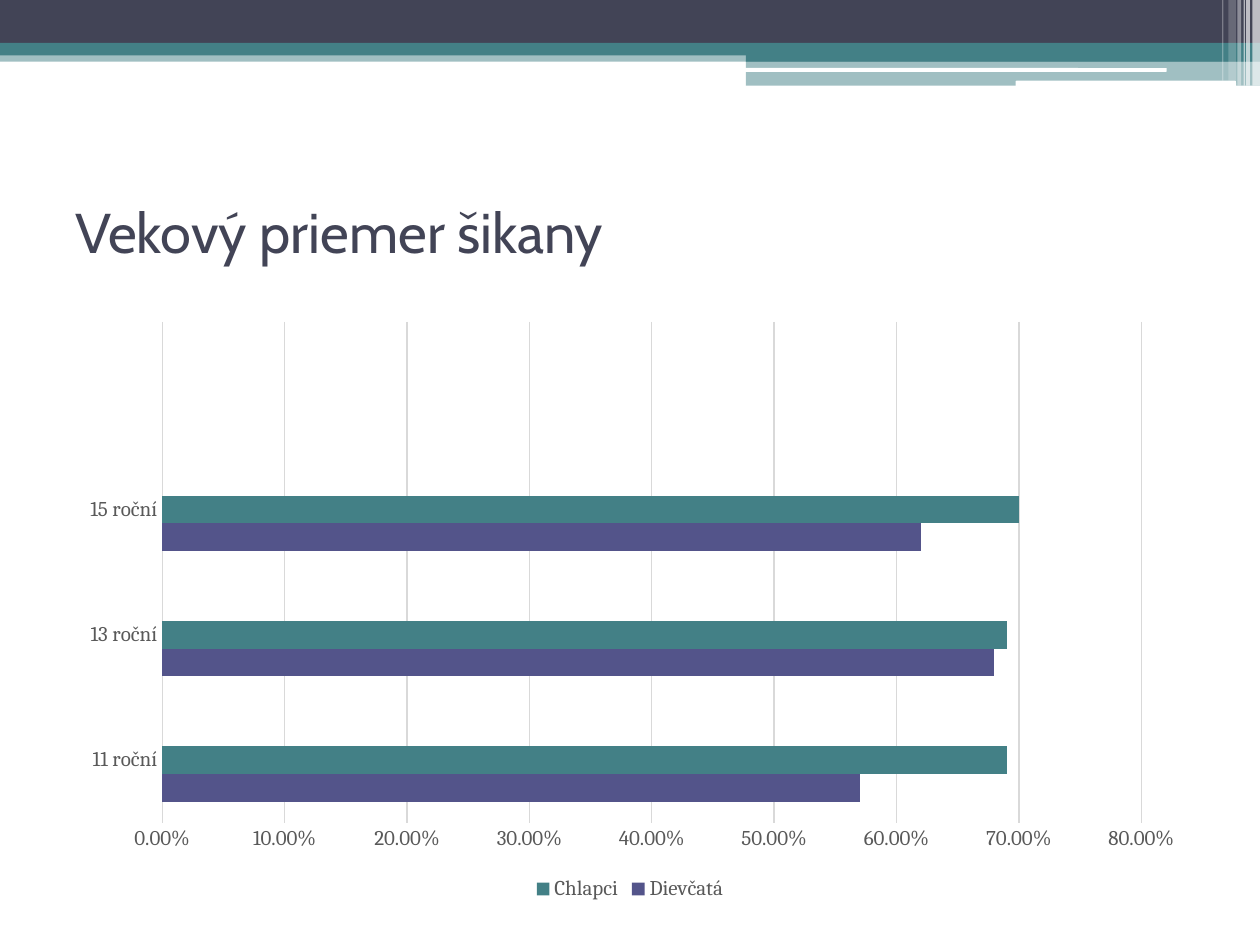
from pptx import Presentation
from pptx.chart import data as cd
from pptx.dml.color import RGBColor
from pptx.enum import chart as ch, shapes, text
from pptx.oxml import parse_xml
from pptx.oxml.ns import nsdecls, qn
from pptx.util import Inches, Pt

NAVY = RGBColor(0x42, 0x44, 0x56)
TEAL = RGBColor(0x43, 0x80, 0x86)
VIOLET = RGBColor(0x53, 0x54, 0x8A)
PURPLE = RGBColor(0xA0, 0x4D, 0xA3)
WHITE = RGBColor(0xFF, 0xFF, 0xFF)
GRAY = RGBColor(0x59, 0x59, 0x59)
PALE = RGBColor(0xD9, 0xD9, 0xD9)
RECT = shapes.MSO_SHAPE.RECTANGLE
ROUND = shapes.MSO_SHAPE.ROUNDED_RECTANGLE


def add_bar(slide, box, color, alpha=100, kind=RECT):
    bar = slide.shapes.add_shape(kind, *map(Inches, box))
    bar.shadow.inherit = False
    bar.line.fill.background()
    bar.fill.solid()
    bar.fill.fore_color.rgb = color
    if alpha < 100:
        tint = bar.fill._xPr.find(qn("a:solidFill"))[0]
        tint.append(parse_xml(f'<a:alpha {nsdecls("a")} val="{alpha * 1000}"/>'))


def add_band(slide, x, y, w):
    mid = x + 5.92
    rest = w - 5.92
    add_bar(slide, (x, y + 0.4, w, 0.09), TEAL, 50)
    add_bar(slide, (x, y, w, 0.34), NAVY)
    add_bar(slide, (x, y + 0.34, w, 0.1), TEAL)
    add_bar(slide, (mid, y + 0.39, rest, 0.1), TEAL)
    add_bar(slide, (mid, y + 0.48, rest, 0.2), TEAL, 50)
    add_bar(slide, (x + 5.91, y + 0.54, 3.35, 0.03), WHITE, kind=ROUND)
    add_bar(slide, (x + 8.06, y + 0.64, 1.75, 0.05), WHITE, kind=ROUND)
    stripes = [(9.94, 0.06, 0.68, 65), (9.89, 0.03, 0.68, 65), (9.87, 0.01, 0.68, 60),
               (9.82, 0.03, 0.68, 40), (9.75, 0.06, 0.64, 20), (9.7, 0.01, 0.64, 30)]
    for left, wide, high, alpha in stripes:
        add_bar(slide, (x + left, y, wide, high), WHITE, alpha)


def add_title(slide, x, y, w, h):
    frame = slide.shapes.add_textbox(*map(Inches, (x, y, w, h))).text_frame
    frame.word_wrap = True
    frame.vertical_anchor = text.MSO_ANCHOR.MIDDLE
    frame.text = "Vekový priemer šikany"
    set_font(frame.paragraphs[0].runs[0].font, "Cabin", 32, NAVY)


def set_font(font, name, size, color):
    font.name = name
    font.size = Pt(size)
    font.color.rgb = color


def add_graph(slide, x, y, w, h):
    data = cd.CategoryChartData(number_format="0.00%")
    data.categories = ["11 roční", "13 roční", " 15 roční", " "]
    data.add_series("Dievčatá", (0.57, 0.68, 0.62, None))
    data.add_series("Chlapci", (0.69, 0.69, 0.7, None))
    data.add_series("Stĺpec1", (None,) * 4)
    graph = slide.shapes.add_chart(
        ch.XL_CHART_TYPE.BAR_CLUSTERED, *map(Inches, (x, y, w, h)), data).chart
    set_font(graph.font, "Cambria", 12, GRAY)
    graph.has_title = False
    plot = graph.plots[0]
    plot.vary_by_categories = False
    plot.gap_width = 150
    plot.overlap = 0
    for series, color in zip(plot.series, (VIOLET, TEAL, PURPLE)):
        series.format.fill.solid()
        series.format.fill.fore_color.rgb = color
    for axis in (graph.category_axis, graph.value_axis):
        axis.major_tick_mark = axis.minor_tick_mark = ch.XL_TICK_MARK.NONE
        axis.format.line.fill.background()
        set_font(axis.tick_labels.font, "Cambria", 12, GRAY)
    scale = graph.value_axis
    scale.minimum_scale, scale.maximum_scale, scale.major_unit = 0, 0.8, 0.1
    scale.tick_labels.number_format = "0.00%"
    scale.tick_labels.number_format_is_linked = False
    grid = scale.major_gridlines.format.line
    grid.color.rgb = PALE
    grid.width = Pt(0.75)
    graph.has_legend = True
    key = graph.legend
    key.position = ch.XL_LEGEND_POSITION.BOTTOM
    key.include_in_layout = False
    set_font(key.font, "Cambria", 12, GRAY)
    key._element.find(qn("c:legendPos")).addnext(parse_xml(
        f'<c:legendEntry {nsdecls("c")}><c:idx val="0"/><c:delete val="1"/></c:legendEntry>'))


def main():
    deck = Presentation()
    deck.slide_width, deck.slide_height = Inches(10), Inches(7.5)
    slide = deck.slides.add_slide(deck.slide_layouts[6])
    add_band(slide, 0, 0, 10)
    add_title(slide, 0.5, 1.25, 9, 1.17)
    add_graph(slide, 0.5, 2.46, 9, 4.73)
    deck.save("out.pptx")


if __name__ == "__main__":
    main()
